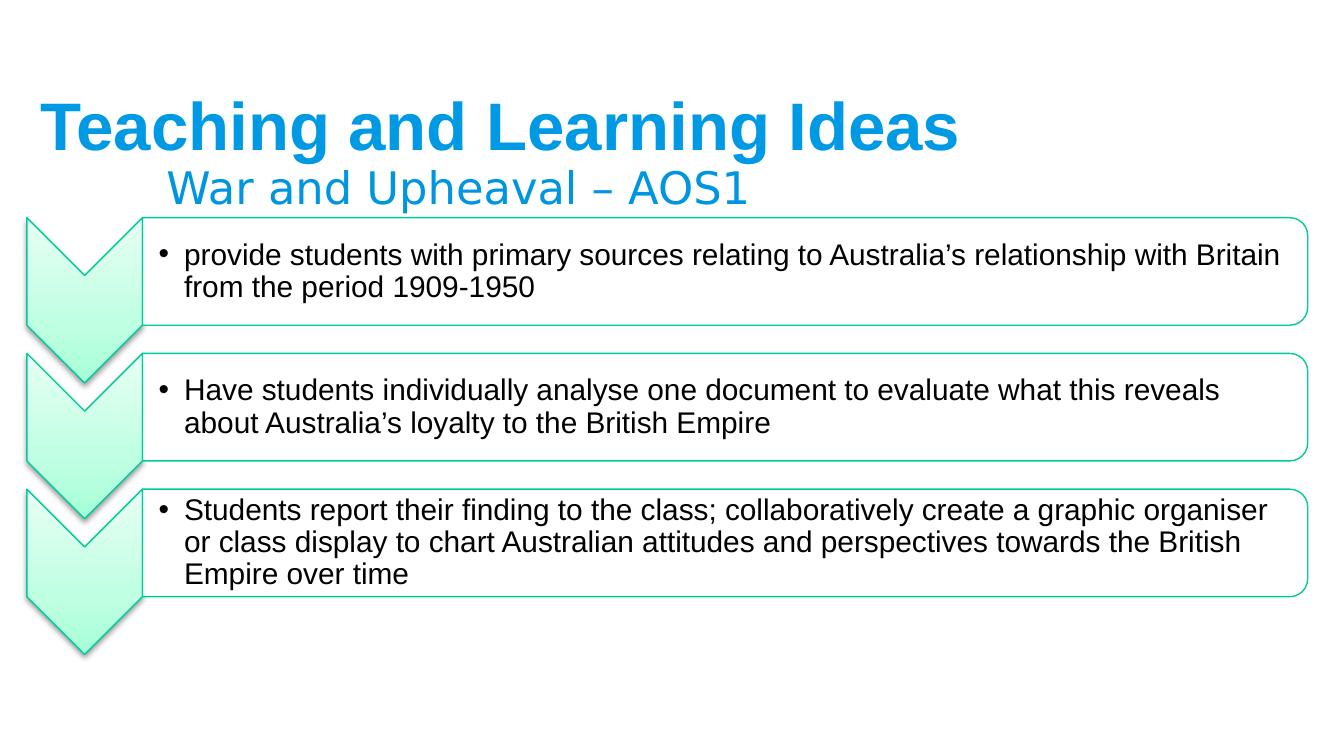
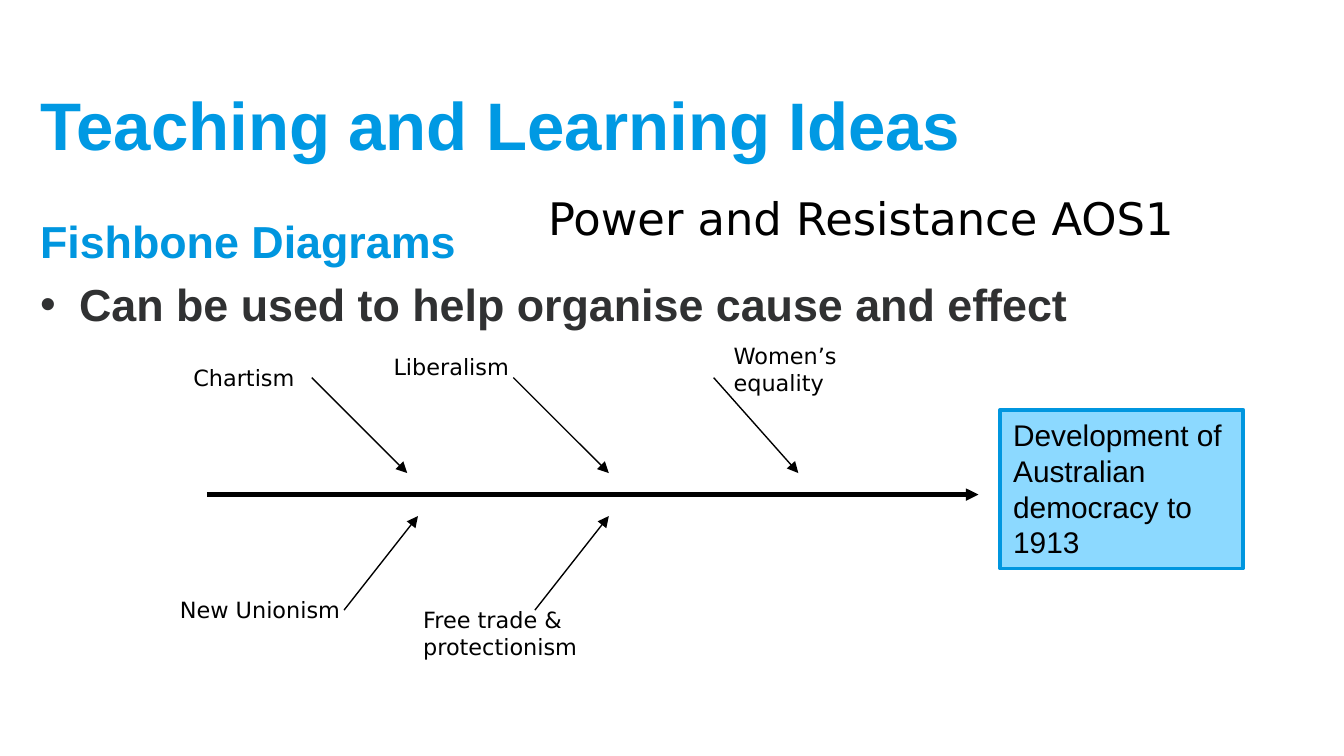
from dataclasses import dataclass

from lxml import etree
from pptx import Presentation
from pptx.dml.color import RGBColor
from pptx.enum.shapes import MSO_CONNECTOR, MSO_SHAPE
from pptx.enum.text import MSO_ANCHOR, MSO_AUTO_SIZE, PP_ALIGN
from pptx.oxml.ns import qn
from pptx.util import Inches, Pt

CHEVRON = MSO_SHAPE.CHEVRON
ROUND_TOP = MSO_SHAPE.ROUND_2_SAME_RECTANGLE
RECTANGLE = MSO_SHAPE.RECTANGLE
STRAIGHT = MSO_CONNECTOR.STRAIGHT
TOP, MIDDLE = MSO_ANCHOR.TOP, MSO_ANCHOR.MIDDLE
LEFT = PP_ALIGN.LEFT
NO_AUTOFIT = MSO_AUTO_SIZE.NONE


@dataclass(frozen=True)
class Theme:
    title: str = "0099E3"
    accent: str = "0096DF"
    accent_light: str = "8CD9FF"
    green: str = "00CC99"
    gradient: tuple = ((0, "A5FFD6"), (35, "BFFFE2"), (100, "E7FFF3"))
    black: str = "000000"
    grey: str = "303132"
    white: str = "FFFFFF"
    font: str = "Arial"
    label_font: str = "DejaVu Sans"
    title_size: int = 36
    heading_size: int = 24
    body_size: int = 16
    label_size: int = 12


THEME = Theme()
SLIDE_WIDTH = 10
SLIDE_HEIGHT = SLIDE_WIDTH * 9 / 16
TITLE = "Teaching and Learning Ideas"
TITLE_BOX = (0.2, 0.45, 9.53, 0.94)

WAR_SUBTITLE = "War and Upheaval – AOS1"
STEPS = [
    "provide students with primary sources relating to Australia’s relationship with Britain from the period 1909-1950",
    "Have students individually analyse one document to evaluate what this reveals about Australia’s loyalty to the British Empire",
    "Students report their finding to the class; collaboratively create a graphic organiser or class display to chart Australian attitudes and perspectives towards the British Empire over time",
]
STEP_LEFT, STEP_TOP, STEP_PITCH = 0.2, 1.62, 1.01
CHEVRON_WIDTH, CHEVRON_HEIGHT = 0.86, 1.23
CARD_WIDTH, CARD_HEIGHT = 8.67, 0.8

POWER_SUBTITLE = "Power and Resistance AOS1"
FISHBONE_HEADING = "Fishbone Diagrams"
FISHBONE_POINT = "Can be used to help organise cause and effect"
EFFECT = "Development of Australian democracy to 1913"
SPINE = (1.54, 3.68, 7.28, 3.68)
UPPER_BONE, LOWER_BONE = (2.81, 3.52), (4.54, 3.84)
CAUSES = [
    ("Chartism", (1.34, 2.66, 1.5, 0.3), (2.32, 3.03), UPPER_BONE),
    ("New Unionism", (1.24, 4.39, 1.77, 0.3), (2.56, 3.11), LOWER_BONE),
    ("Liberalism", (2.83, 2.58, 1.38, 0.3), (3.82, 4.53), UPPER_BONE),
    ("Free trade & protectionism", (3.05, 4.46, 1.38, 0.5), (3.98, 4.53), LOWER_BONE),
    ("Women’s equality", (5.36, 2.5, 1.22, 0.5), (5.31, 5.94), UPPER_BONE),
]


def rgb(color):
    return RGBColor.from_string(color)


def inches(values):
    return [Inches(value) for value in values]


def add_xml(parent, tag, **attributes):
    return etree.SubElement(parent, qn(tag), attributes)


def write(paragraph, text, size=THEME.body_size, color=THEME.black, font=THEME.font,
          bold=False, bullet_indent=None, line_spacing=None, space_before=None):
    paragraph.alignment = LEFT
    if line_spacing is not None:
        paragraph.line_spacing = line_spacing
    if space_before is not None:
        paragraph.space_before = Pt(space_before)
    if bullet_indent is not None:
        properties = paragraph._p.get_or_add_pPr()
        properties.set("marL", str(Inches(bullet_indent)))
        properties.set("indent", str(-Inches(bullet_indent)))
        add_xml(properties, "a:buFont", typeface=THEME.font)
        add_xml(properties, "a:buChar", char="•")
    run = paragraph.add_run()
    run.text = text
    run.font.size = Pt(size)
    run.font.name = font
    run.font.bold = bold
    run.font.color.rgb = rgb(color)


def set_frame(shape, anchor=TOP, insets=(0.1, 0.05, 0.1, 0.05)):
    frame = shape.text_frame
    frame.word_wrap = True
    frame.auto_size = NO_AUTOFIT
    frame.vertical_anchor = anchor
    (frame.margin_left, frame.margin_top,
     frame.margin_right, frame.margin_bottom) = inches(insets)
    return frame


def add_text(slide, box, text, anchor=TOP, insets=(0.1, 0.05, 0.1, 0.05), **style):
    frame = set_frame(slide.shapes.add_textbox(*inches(box)), anchor, insets)
    write(frame.paragraphs[0], text, **style)
    return frame


def add_label(slide, box, text, **style):
    add_text(slide, box, text, font=THEME.label_font, **style)


def add_box(slide, kind, box, fill, line, line_width):
    shape = slide.shapes.add_shape(kind, *inches(box))
    shape.shadow.inherit = False
    shape.fill.solid()
    shape.fill.fore_color.rgb = rgb(fill)
    shape.line.color.rgb = rgb(line)
    shape.line.width = Pt(line_width)
    return shape


def add_turned_box(slide, kind, box, fill):
    left, top, width, height = box
    shift = (width - height) / 2
    shape = add_box(slide, kind, (left + shift, top - shift, height, width),
                    fill, THEME.green, 0.75)
    shape.rotation = 90
    return shape


def add_chevron(slide, box):
    shape = add_turned_box(slide, CHEVRON, box, THEME.white)
    properties = shape._element.spPr
    solid = properties.find(qn("a:solidFill"))
    gradient = etree.Element(qn("a:gradFill"), rotWithShape="0")
    stops = add_xml(gradient, "a:gsLst")
    for position, color in THEME.gradient:
        stop = add_xml(stops, "a:gs", pos=str(position * 1000))
        add_xml(stop, "a:srgbClr", val=color)
    add_xml(gradient, "a:lin", ang="16200000", scaled="0")
    properties.replace(solid, gradient)
    shadow = add_xml(properties.find(qn("a:effectLst")), "a:outerShdw",
                     blurRad=str(Pt(3.1)), dist=str(Pt(1.6)), dir="5400000",
                     rotWithShape="0")
    color = add_xml(shadow, "a:srgbClr", val=THEME.black)
    add_xml(color, "a:alpha", val="38000")


def add_card(slide, box):
    shape = add_turned_box(slide, ROUND_TOP, box, THEME.white)
    color = shape._element.spPr.find(qn("a:solidFill")).find(qn("a:srgbClr"))
    add_xml(color, "a:alpha", val="90000")


def add_arrow(slide, ends, width=0.75):
    connector = slide.shapes.add_connector(STRAIGHT, *inches(ends))
    connector.line.color.rgb = rgb(THEME.black)
    connector.line.width = Pt(width)
    add_xml(connector.line._get_or_add_ln(), "a:tailEnd", type="triangle")
    add_xml(connector._element.spPr, "a:effectLst")


def add_titled_slide(presentation):
    slide = presentation.slides.add_slide(presentation.slide_layouts[5])
    title = slide.shapes.title
    title.left, title.top, title.width, title.height = inches(TITLE_BOX)
    write(set_frame(title, MIDDLE).paragraphs[0], TITLE,
          size=THEME.title_size, color=THEME.title, bold=True)
    return slide


def build_war_slide(presentation):
    slide = add_titled_slide(presentation)
    card_left = STEP_LEFT + CHEVRON_WIDTH
    for row, step in enumerate(STEPS):
        top = STEP_TOP + row * STEP_PITCH
        card = (card_left, top, CARD_WIDTH, CARD_HEIGHT)
        add_chevron(slide, (STEP_LEFT, top, CHEVRON_WIDTH, CHEVRON_HEIGHT))
        add_card(slide, card)
        add_text(slide, (card_left, top + 0.04, CARD_WIDTH - 0.04, CARD_HEIGHT - 0.08),
                 step, anchor=MIDDLE, insets=(0.12, 0.01, 0.01, 0.01),
                 bullet_indent=0.19, line_spacing=0.9)
    add_label(slide, (1.14, 1.14, 7.72, 0.5), WAR_SUBTITLE,
              size=THEME.heading_size, color=THEME.accent)


def build_power_slide(presentation):
    slide = add_titled_slide(presentation)
    body = add_text(slide, (0.2, 1.54, 9.53, 3.25), FISHBONE_HEADING,
                    size=THEME.heading_size, color=THEME.accent, bold=True)
    write(body.add_paragraph(), FISHBONE_POINT, size=THEME.heading_size,
          color=THEME.grey, bold=True, bullet_indent=0.29, space_before=5)
    add_arrow(slide, SPINE, width=2.25)
    for cause, box, (start_x, end_x), (start_y, end_y) in CAUSES:
        add_arrow(slide, (start_x, start_y, end_x, end_y))
        add_label(slide, box, cause, size=THEME.label_size)
    effect = add_box(slide, RECTANGLE, (7.44, 3.05, 1.81, 1.18),
                     THEME.accent_light, THEME.accent, 2)
    write(set_frame(effect).paragraphs[0], EFFECT)
    add_label(slide, (3.98, 1.37, 5.67, 0.5), POWER_SUBTITLE, size=THEME.heading_size)


def main():
    presentation = Presentation()
    presentation.slide_width = Inches(SLIDE_WIDTH)
    presentation.slide_height = Inches(SLIDE_HEIGHT)
    build_war_slide(presentation)
    build_power_slide(presentation)
    presentation.save("out.pptx")


if __name__ == "__main__":
    main()
